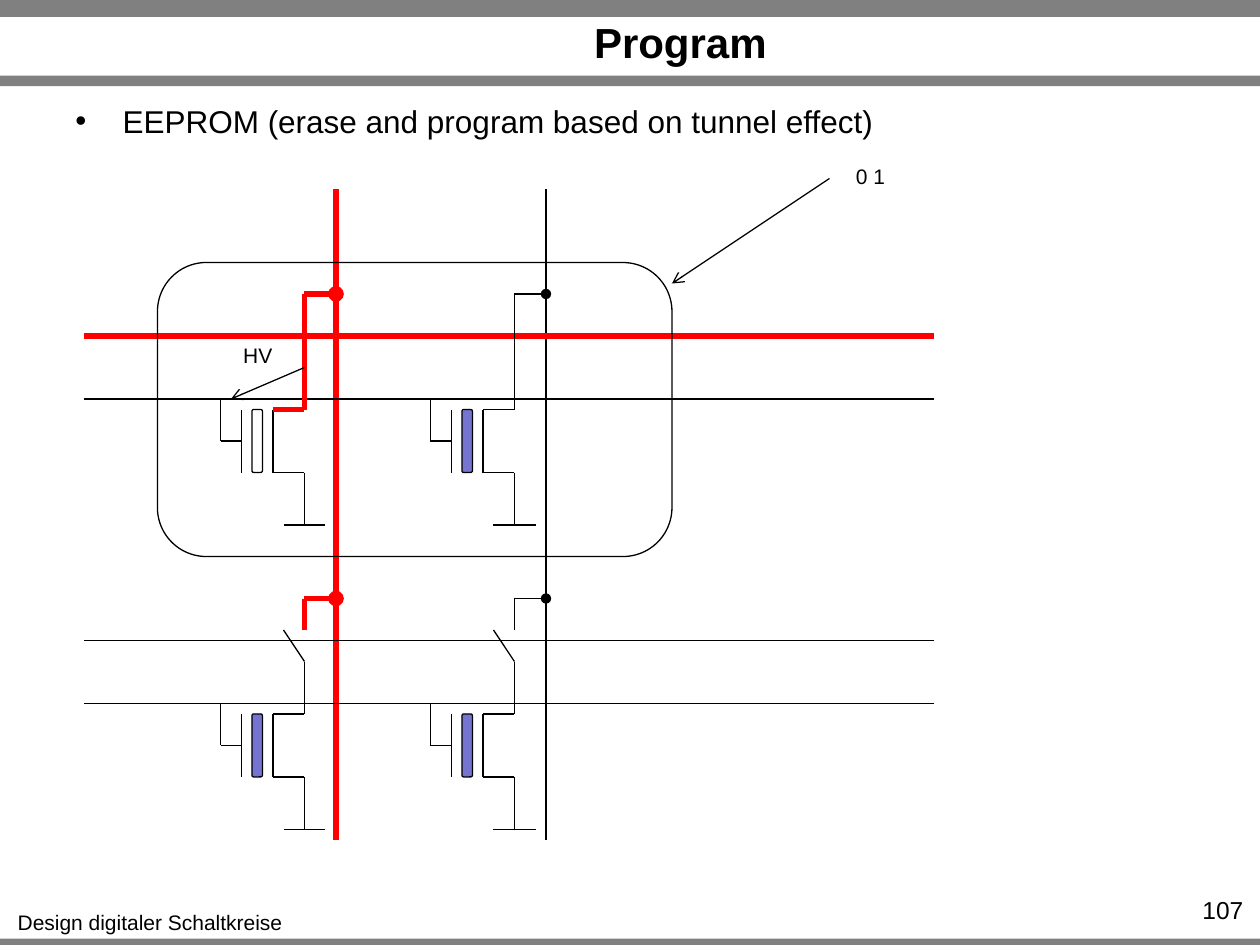
"""Build the slide on programming an EEPROM cell array."""
from typing import NamedTuple

from lxml.etree import SubElement
from pptx import Presentation
from pptx.dml.color import RGBColor
from pptx.enum.shapes import MSO_CONNECTOR, MSO_SHAPE
from pptx.enum.text import MSO_ANCHOR, MSO_AUTO_SIZE, PP_ALIGN
from pptx.oxml.ns import qn
from pptx.util import Emu, Pt

SCALE = 7620
COLORS = {"bar": "808080", "ink": "000000", "active": "FF0000", "charge": "7575D1"}
WIDTHS = {"ink": 0.75, "active": 3}


class Box(NamedTuple):
    x: int
    y: int
    w: int
    h: int


class Wire(NamedTuple):
    x1: int
    y1: int
    x2: int
    y2: int
    color: str = "ink"
    tail: str = ""


class Label(NamedTuple):
    text: str
    box: Box
    size: int
    align: PP_ALIGN
    wrap: bool = True


class Cell(NamedTuple):
    bit: int
    word: int
    contact: str
    drain: str
    is_open: bool
    charged: bool


BARS = [Box(0, 894, 1200, 6), Box(0, 0, 1200, 16), Box(0, 72, 1200, 10)]
LABELS = [
    Label("Design digitaler Schaltkreise", Box(4, 860, 278, 36), 12, PP_ALIGN.CENTER, False),
    Label("107", Box(1092, 847, 104, 29), 14, PP_ALIGN.RIGHT),
    Label("0 1", Box(803, 150, 52, 36), 12, PP_ALIGN.CENTER, False),
    Label("HV", Box(219, 320, 53, 36), 12, PP_ALIGN.CENTER, False),
]
BULLET = Label("EEPROM (erase and program based on tunnel effect)",
               Box(60, 91, 1080, 79), 18, PP_ALIGN.LEFT)
BIT_LINES = {320: "active", 520: "ink"}
ROW_LINES = {320: "active", 380: "ink", 610: "ink", 670: "ink"}
CELLS = [
    Cell(320, 380, "active", "active", False, False),
    Cell(520, 380, "ink", "ink", False, True),
    Cell(320, 670, "active", "ink", True, True),
    Cell(520, 670, "ink", "ink", True, True),
]
ARROWS = [Wire(790, 170, 640, 270, tail="arrow"), Wire(290, 350, 220, 380, tail="arrow")]


def px(n: int) -> Emu:
    """Turn px into EMU."""
    return Emu(n * SCALE)


def rgb(name: str) -> RGBColor:
    """Look up a named colour."""
    return RGBColor.from_string(COLORS[name])


def draw_wire(slide, wire: Wire) -> None:
    """Draw a straight line with an optional end mark."""
    ends = (px(n) for n in wire[:4])
    sp = slide.shapes.add_connector(MSO_CONNECTOR.STRAIGHT, *ends)
    sp.line.color.rgb = rgb(wire.color)
    sp.line.width = Pt(WIDTHS[wire.color])
    if wire.tail:
        SubElement(sp.line._get_or_add_ln(), qn("a:tailEnd"), type=wire.tail)
    SubElement(sp._element.spPr, qn("a:effectLst"))


def draw_box(slide, kind: MSO_SHAPE, box: Box, fill: str = "", line: str = "") -> None:
    """Draw a preset shape with an optional fill and outline."""
    sp = slide.shapes.add_shape(kind, *map(px, box))
    sp.shadow.inherit = False
    if fill:
        sp.fill.solid()
        sp.fill.fore_color.rgb = rgb(fill)
    else:
        sp.fill.background()
    if line:
        sp.line.color.rgb = rgb(line)
        sp.line.width = Pt(WIDTHS[line])
    else:
        sp.line.fill.background()


def write(p, text: str, size: int, align: PP_ALIGN, bold: bool = False) -> None:
    """Fill a paragraph with one formatted run."""
    p.alignment = align
    r = p.add_run()
    r.text = text
    for key, value in {"name": "Arial", "size": Pt(size), "bold": bold}.items():
        setattr(r.font, key, value)
    r.font.color.rgb = rgb("ink")


def draw_label(slide, label: Label, bullet: str = "") -> None:
    """Add a text box, with a hanging bullet if one is given."""
    tf = slide.shapes.add_textbox(*map(px, label.box)).text_frame
    tf.word_wrap = label.wrap
    p = tf.paragraphs[0]
    if bullet:
        pPr = p._p.get_or_add_pPr()
        pPr.set("marL", str(px(45)))
        pPr.set("indent", str(px(-45)))
        SubElement(pPr, qn("a:buFont"), typeface="Arial")
        SubElement(pPr, qn("a:buChar"), char=bullet)
    write(p, label.text, label.size, label.align)


def draw_title(slide, text: str, box: Box) -> None:
    """Place and format the title placeholder."""
    sp = slide.shapes.title
    for key, value in zip(("left", "top", "width", "height"), box):
        setattr(sp, key, px(value))
    tf = sp.text_frame
    frame = {"vertical_anchor": MSO_ANCHOR.MIDDLE, "auto_size": MSO_AUTO_SIZE.NONE,
             "word_wrap": True}
    for key, value in frame.items():
        setattr(tf, key, value)
    write(tf.paragraphs[0], text, 24, PP_ALIGN.CENTER, True)


def draw_cell(slide, cell: Cell) -> None:
    """Draw a floating-gate transistor between its bit and word lines."""
    b, w = cell.bit, cell.word
    drain, channel, gate, feed = b - 30, b - 60, b - 90, b - 110
    wires = [
        Wire(channel, w + 10, channel, w + 70),
        Wire(channel, w + 70, drain, w + 70),
        Wire(drain, w + 70, drain, w + 120),
        Wire(b - 50, w + 120, b - 10, w + 120),
        Wire(gate, w + 10, gate, w + 70),
        Wire(gate, w + 40, feed, w + 40),
        Wire(feed, w + 40, feed, w),
        Wire(channel, w + 10, drain, w + 10, cell.drain),
        Wire(drain, w - 100, b, w - 100, cell.contact, "oval"),
    ]
    if cell.is_open:
        wires += [
            Wire(drain, w - 100, drain, w - 70, cell.contact),
            Wire(drain, w - 40, b - 50, w - 70),
            Wire(drain, w - 40, drain, w + 10, cell.drain),
        ]
    else:
        wires.append(Wire(drain, w - 100, drain, w + 10, cell.drain))
    for wire in wires:
        draw_wire(slide, wire)
    fill = "charge" if cell.charged else ""
    draw_box(slide, MSO_SHAPE.ROUNDED_RECTANGLE, Box(b - 80, w + 10, 10, 60), fill, "ink")


def main() -> None:
    """Assemble and save the slide."""
    prs = Presentation()
    prs.slide_width, prs.slide_height = px(1200), px(900)
    s = prs.slides.add_slide(prs.slide_layouts[5])
    for bar in BARS:
        draw_box(s, MSO_SHAPE.RECTANGLE, bar, "bar")
    draw_title(s, "Program", Box(156, 17, 984, 46))
    draw_label(s, BULLET, "•")
    for x, color in BIT_LINES.items():
        draw_wire(s, Wire(x, 180, x, 800, color))
    for y, color in ROW_LINES.items():
        draw_wire(s, Wire(80, y, 890, y, color))
    for cell in CELLS:
        draw_cell(s, cell)
    draw_box(s, MSO_SHAPE.ROUNDED_RECTANGLE, Box(150, 250, 490, 280), line="ink")
    for arrow in ARROWS:
        draw_wire(s, arrow)
    for label in LABELS:
        draw_label(s, label)
    prs.save("out.pptx")


if __name__ == "__main__":
    main()
